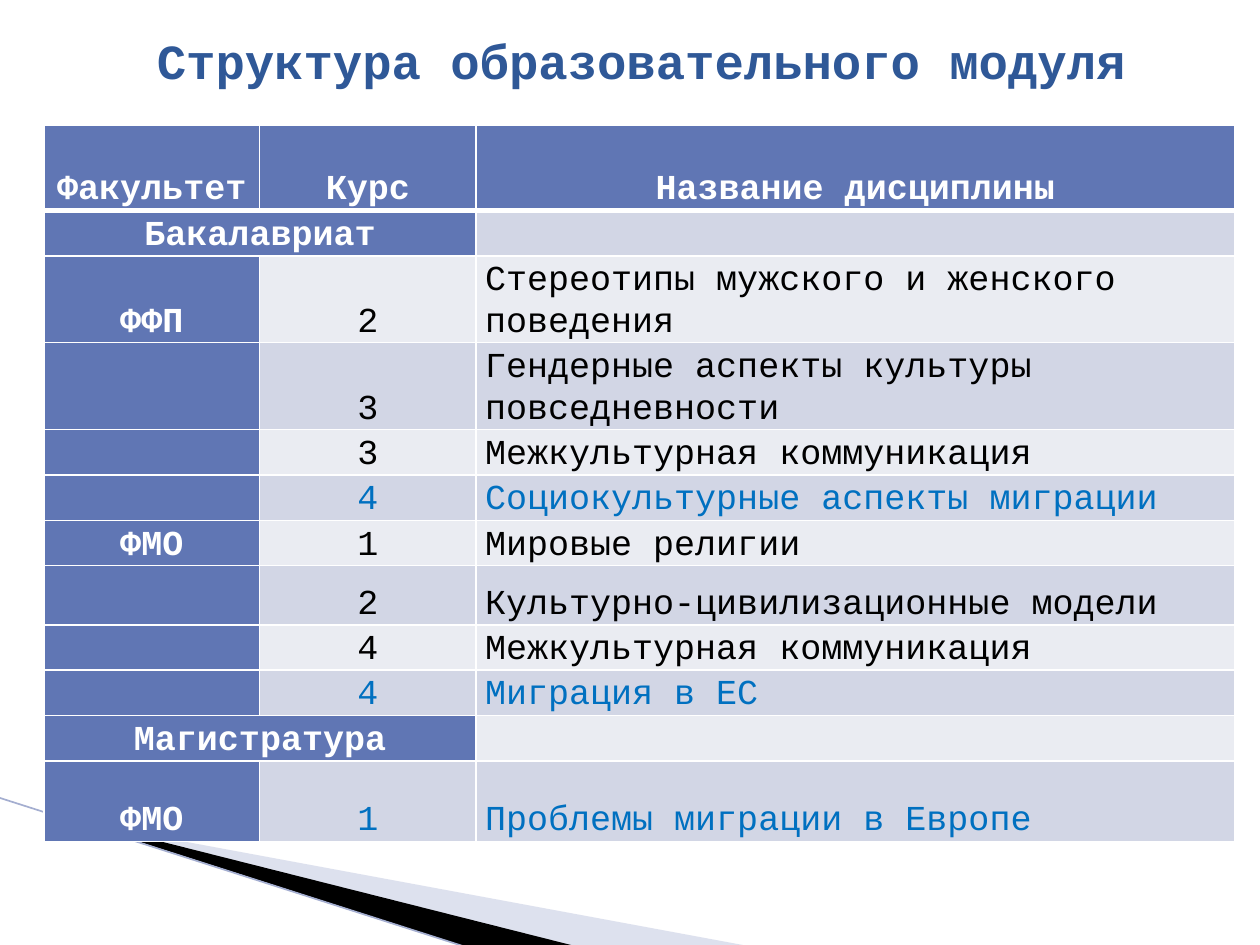
from dataclasses import dataclass

from lxml import etree
from pptx import Presentation
from pptx import util as u
from pptx.dml.color import RGBColor
from pptx.enum import shapes, text
from pptx.oxml import ns

# Content: faculty, year, discipline, highlighted
TITLE = "Структура образовательного модуля"
HEADER = ("Факультет", "Курс", "Название дисциплины")
ROWS = [
    ("Бакалавриат", None, "", False),
    ("ФФП", "2", "Стереотипы мужского и женского поведения", False),
    ("", "3", "Гендерные аспекты культуры повседневности", False),
    ("", "3", "Межкультурная коммуникация", False),
    ("", "4", "Социокультурные аспекты миграции", True),
    ("ФМО", "1", "Мировые религии", False),
    ("", "2", "Культурно-цивилизационные модели", False),
    ("", "4", "Межкультурная коммуникация", False),
    ("", "4", "Миграция в ЕС", True),
    ("Магистратура", None, "", False),
    ("ФМО", "1", "Проблемы миграции в Европе", True),
]

# Grid, in inches
COLUMNS = (1.71, 1.72, 6.02)
LINE_ROW = 0.36
TALL_ROWS = {0: 0.68, 2: 0.69, 3: 0.69, 7: 0.47, 11: 0.64}
TABLE_LEFT, TABLE_TOP = 0.35, 0.99

# Corner decoration: outline, theme colour, opacity in percent
WEDGES = [
    ([(0.55, 6.51), (5.95, 7.51), (4.56, 7.51), (0.55, 6.5)], "wedge", 40),
    ([(0.53, 6.49), (4.57, 7.51), (3.72, 7.52), (0.54, 6.5)], "ink", 100),
]
EDGE = (-0.01, 6.33, 3.71, 7.52)


@dataclass(frozen=True)
class Theme:
    font: str = "Courier New"
    title_size: int = 28
    cell_size: int = 20
    title: str = "2F5897"
    head: str = "6076B4"
    bands: tuple = ("EAECF2", "D2D6E5")
    white: str = "FFFFFF"
    ink: str = "000000"
    accent: str = "0070C0"
    wedge: str = "ACB4D5"
    edge: str = "A4AED0"


THEME = Theme()


def rgb(value):
    return RGBColor.from_string(value)


def write(frame, words, *, size, color, bold=False, align=None, spacing=None):
    para = frame.paragraphs[0]
    para.alignment = align
    para.line_spacing = spacing
    span = para.add_run()
    span.text = words
    span.font.name = THEME.font
    span.font.size = u.Pt(size)
    span.font.bold = bold
    span.font.color.rgb = rgb(color)


def set_borders(cell, **widths):
    props = cell._tc.get_or_add_tcPr()
    for index, side in enumerate(("L", "R", "T", "B")):
        line = etree.Element(ns.qn(f"a:ln{side}"), w=str(u.Pt(widths.get(side, 1))))
        fill = etree.SubElement(line, ns.qn("a:solidFill"))
        etree.SubElement(fill, ns.qn("a:srgbClr"), val=THEME.white)
        props.insert(index, line)


def add_wedge(page, points, color, opacity):
    builder = page.shapes.build_freeform(
        *(round(value * 100) for value in points[0]), scale=u.Inches(0.01))
    builder.add_line_segments(
        [(round(x * 100), round(y * 100)) for x, y in points[1:]], close=True)
    wedge = builder.convert_to_shape()
    wedge.shadow.inherit = False
    wedge.fill.solid()
    wedge.fill.fore_color.rgb = rgb(color)
    wedge.line.fill.background()
    if opacity < 100:
        tint = wedge._element.spPr.find(".//" + ns.qn("a:srgbClr"))
        etree.SubElement(tint, ns.qn("a:alpha"), val=str(opacity * 1000))


def add_edge(page):
    edge = page.shapes.add_connector(
        shapes.MSO_CONNECTOR.STRAIGHT, *(u.Inches(value) for value in EDGE))
    edge.line.color.rgb = rgb(THEME.edge)
    edge.line.width = u.Pt(0.95)
    etree.SubElement(edge._element.spPr, ns.qn("a:effectLst"))


def add_title(page):
    box = page.shapes.title
    box.left, box.top, box.width, box.height = (
        u.Inches(value) for value in (0.59, 0.01, 9, 0.93))
    box.text_frame.vertical_anchor = text.MSO_ANCHOR.MIDDLE
    write(box.text_frame, TITLE, size=THEME.title_size, color=THEME.title,
          bold=True, align=text.PP_ALIGN.CENTER)


def format_cell(cell, words, row, column, highlighted, merged):
    heading = row == 0 or column == 0 or (merged and column == 1)
    cell.fill.solid()
    cell.fill.fore_color.rgb = rgb(THEME.head if heading else THEME.bands[row % 2])
    cell.margin_left = cell.margin_right = u.Inches(0.07)
    cell.margin_top = cell.margin_bottom = 0
    cell.vertical_anchor = text.MSO_ANCHOR.BOTTOM
    set_borders(cell, T=3 if row == 1 else 1, B=3 if row == 0 else 1)
    if words:
        body = THEME.accent if highlighted else THEME.ink
        centred = heading or column == 1
        write(cell.text_frame, words, size=THEME.cell_size,
              color=THEME.white if heading else body, bold=heading, spacing=1.06,
              align=text.PP_ALIGN.CENTER if centred else text.PP_ALIGN.LEFT)


def add_modules(page):
    lines = [(*HEADER, False), *ROWS]
    heights = [TALL_ROWS.get(row, LINE_ROW) for row in range(len(lines))]
    table = page.shapes.add_table(
        len(lines), len(COLUMNS), u.Inches(TABLE_LEFT), u.Inches(TABLE_TOP),
        u.Inches(sum(COLUMNS)), u.Inches(sum(heights))).table
    for column, width in zip(table.columns, COLUMNS):
        column.width = u.Inches(width)
    for row, (*words, highlighted) in enumerate(lines):
        table.rows[row].height = u.Inches(heights[row])
        merged = words[1] is None
        for column, value in enumerate(words):
            format_cell(table.cell(row, column), value, row, column,
                        highlighted, merged)
        if merged:
            table.cell(row, 0).merge(table.cell(row, 1))


def main():
    deck = Presentation()
    deck.slide_width, deck.slide_height = u.Inches(10), u.Inches(7.5)
    page = deck.slides.add_slide(deck.slide_layouts[5])
    page.background.fill.solid()
    page.background.fill.fore_color.rgb = rgb(THEME.white)
    for points, color, opacity in WEDGES:
        add_wedge(page, points, getattr(THEME, color), opacity)
    add_edge(page)
    add_title(page)
    add_modules(page)
    deck.save("out.pptx")


if __name__ == "__main__":
    main()
